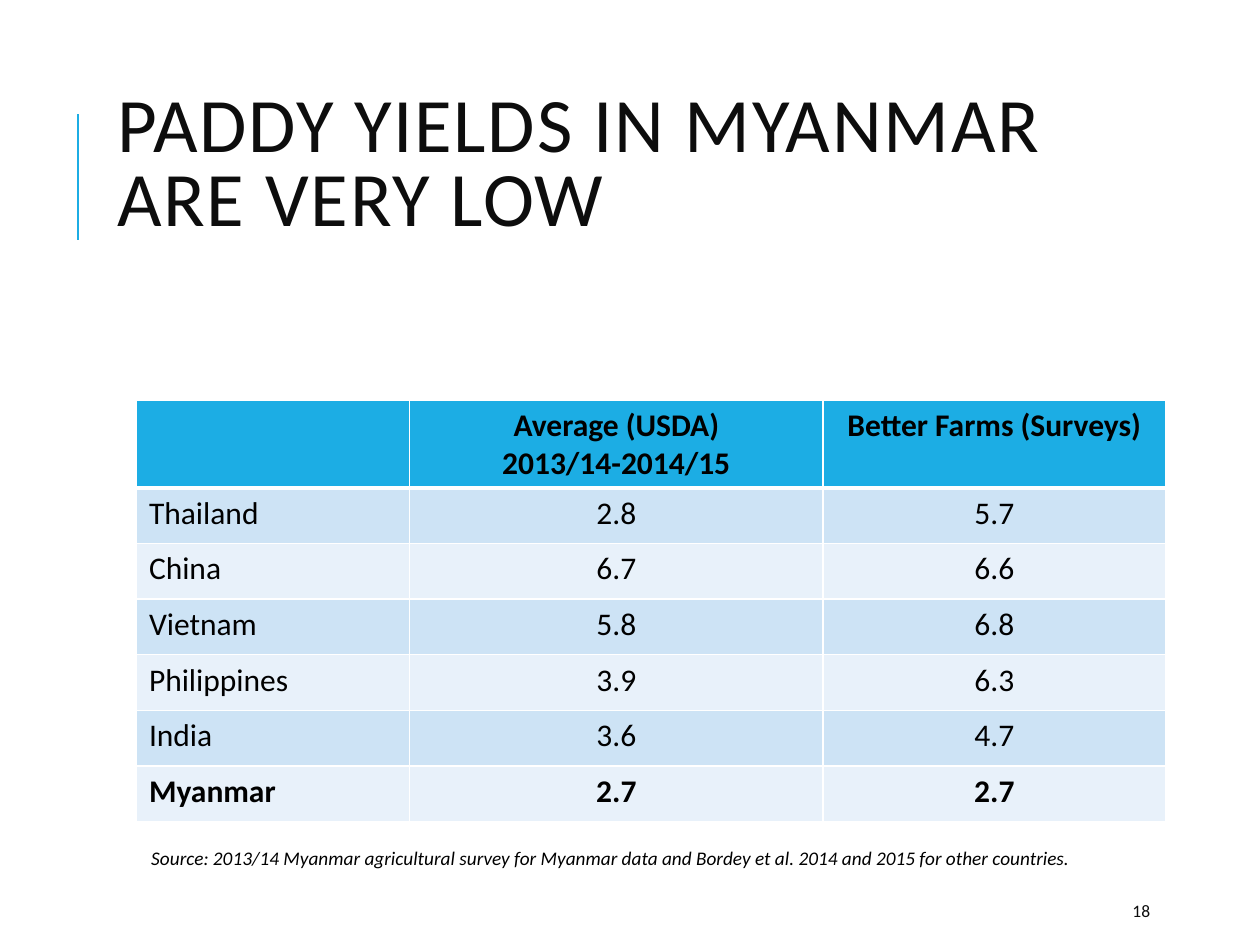
from dataclasses import dataclass

from lxml.etree import SubElement
from pptx import Presentation
from pptx.dml.color import RGBColor as Rgb
from pptx.enum.shapes import MSO_CONNECTOR as Connector
from pptx.enum.text import MSO_ANCHOR as Anchor, MSO_AUTO_SIZE as AutoSize, PP_ALIGN as Align
from pptx.oxml.ns import qn
from pptx.util import Cm, Pt


@dataclass(frozen=True)
class Theme:
    font: str = "Calibri"
    accent: str = "1CADE4"
    heading: str = "0D0D0D"
    ink: str = "000000"
    paper: str = "FFFFFF"
    bands: tuple = ("CDE3F5", "E8F1FA")
    title_size: int = 44
    table_size: int = 18
    source_size: int = 11
    number_size: int = 10


THEME = Theme()

YIELDS = [
    ("", "Average (USDA)\n2013/14-2014/15", "Better Farms (Surveys)"),
    ("Thailand", "2.8", "5.7"),
    ("China", "6.7", "6.6"),
    ("Vietnam", "5.8", "6.8"),
    ("Philippines", "3.9", "6.3"),
    ("India", "3.6", "4.7"),
    ("Myanmar", "2.7", "2.7"),
]


def write_text(frame, text, size, color=THEME.ink, bold=False, italic=False,
               align=Align.LEFT, line_spacing=None, before=0, after=0,
               indent=None, tracking=None):
    for index, line in enumerate(text.split("\n")):
        paragraph = frame.paragraphs[0] if index == 0 else frame.add_paragraph()
        paragraph.alignment = align
        paragraph.line_spacing = line_spacing
        paragraph.space_before, paragraph.space_after = Pt(before), Pt(after)
        if indent is not None:
            paragraph._p.get_or_add_pPr().set("marL", str(indent))
        run = paragraph.add_run()
        run.text = line
        font = run.font
        font.name, font.size = THEME.font, Pt(size)
        font.bold, font.italic = bold, italic
        font.color.rgb = Rgb.from_string(color)
        if tracking is not None:
            run._r.get_or_add_rPr().set("spc", str(tracking * 100))


def place_title(slide, text):
    title = slide.shapes.title
    title.left, title.top = Cm(2.11), Cm(1.07)
    title.width, title.height = Cm(21.79), Cm(4.6)
    frame = title.text_frame
    frame.word_wrap, frame.auto_size = True, AutoSize.NONE
    frame.vertical_anchor = Anchor.MIDDLE
    write_text(frame, text, THEME.title_size, THEME.heading,
               line_spacing=0.8, tracking=1)


def add_accent_line(slide):
    accent = slide.shapes.add_connector(
        Connector.STRAIGHT, Cm(1.57), Cm(4.83), Cm(1.57), Cm(2.29))
    accent.line.color.rgb = Rgb.from_string(THEME.accent)
    accent.line.width = Pt(1.5)
    SubElement(accent._element.spPr, qn("a:effectLst"))


def add_note(slide, text, left, top, width, height, anchor=Anchor.TOP, **style):
    frame = slide.shapes.add_textbox(Cm(left), Cm(top), Cm(width), Cm(height)).text_frame
    frame.word_wrap = True
    frame.vertical_anchor = anchor
    write_text(frame, text, **style)


def set_borders(cell, **widths):
    properties = cell._tc.get_or_add_tcPr()
    for side in "LRTB":
        border = SubElement(properties, qn(f"a:ln{side}"), w=str(Pt(widths.get(side, 1))))
        fill = SubElement(border, qn("a:solidFill"))
        SubElement(fill, qn("a:srgbClr"), val=THEME.paper)


def add_yield_table(slide):
    column_widths = (5.51, 8.33, 6.91)
    row_heights = [1.75] + [1.12] * (len(YIELDS) - 1)
    table = slide.shapes.add_table(
        len(YIELDS), len(column_widths), Cm(2.75), Cm(8.06),
        Cm(sum(column_widths)), Cm(sum(row_heights))).table
    for column, width in zip(table.columns, column_widths):
        column.width = Cm(width)
    for row_index, (row, height, values) in enumerate(zip(table.rows, row_heights, YIELDS)):
        row.height = Cm(height)
        header = row_index == 0
        color = THEME.accent if header else THEME.bands[(row_index - 1) % 2]
        rule = {0: {"B": 3}, 1: {"T": 3}}.get(row_index, {})
        for column_index, (cell, value) in enumerate(zip(row.cells, values)):
            set_borders(cell, **rule)
            cell.fill.solid()
            cell.fill.fore_color.rgb = Rgb.from_string(color)
            if value:
                write_text(cell.text_frame, value, THEME.table_size,
                           bold=header or values[0] == "Myanmar",
                           align=Align.CENTER if column_index else Align.LEFT)


def main():
    deck = Presentation()
    deck.slide_width, deck.slide_height = Cm(25.4), Cm(19.05)
    slide = deck.slides.add_slide(deck.slide_layouts.get_by_name("Title Only"))
    add_accent_line(slide)
    place_title(slide, "PADDY YIELDS IN MYANMAR ARE VERY LOW")
    add_note(slide, "18", 22.58, 17.98, 2.03, 0.76, anchor=Anchor.MIDDLE,
             size=THEME.number_size, color=THEME.heading)
    add_yield_table(slide)
    add_note(slide, "Source: 2013/14 Myanmar agricultural survey for Myanmar data "
             "and Bordey et al. 2014 and 2015 for other countries.",
             2.16, 16.94, 20.75, 0.74, size=THEME.source_size, italic=True,
             before=3, after=6, indent=Cm(0.64))
    deck.save("out.pptx")


if __name__ == "__main__":
    main()
